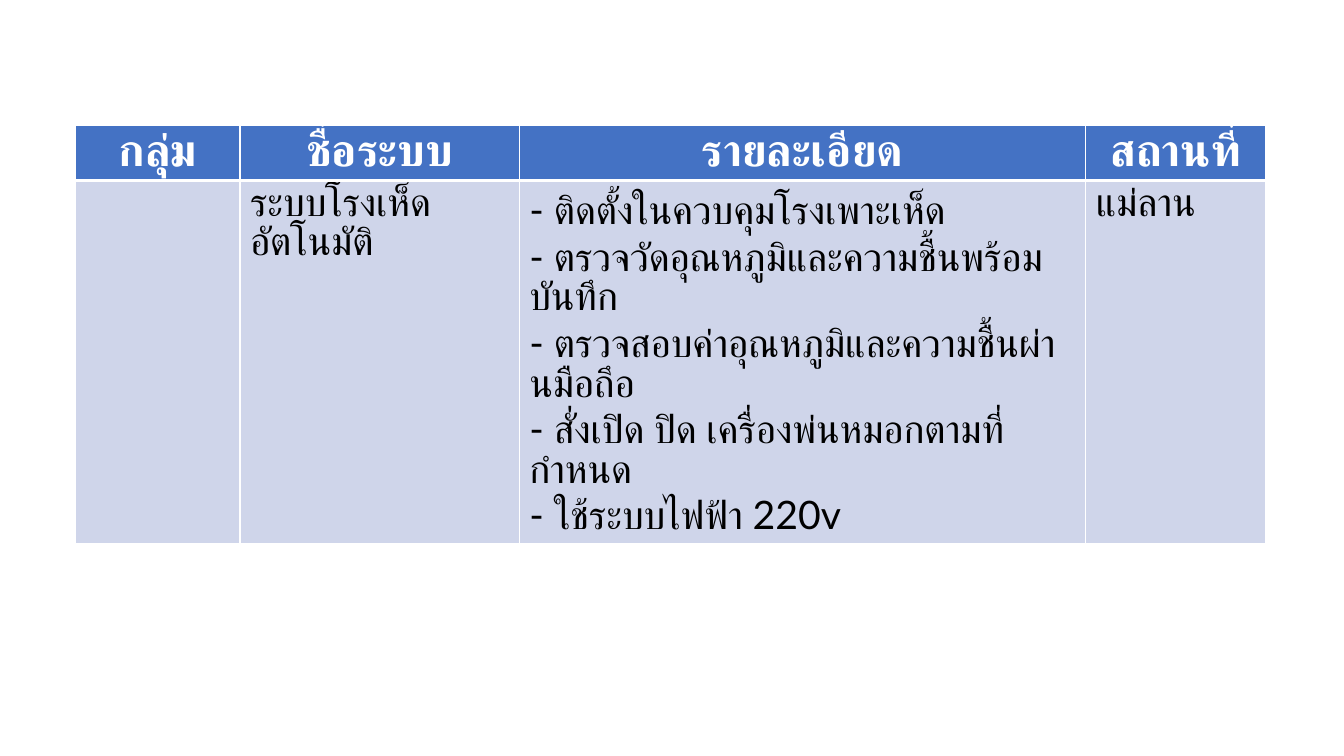
from dataclasses import dataclass

from lxml.etree import SubElement
from pptx import Presentation
from pptx.dml.color import RGBColor
from pptx.enum.text import PP_ALIGN
from pptx.oxml.ns import qn
from pptx.util import Inches, Pt


@dataclass(frozen=True)
class Theme:
    font: str = "Lato"
    white: str = "FFFFFF"
    black: str = "000000"
    header_fill: str = "4472C4"
    body_fill: str = "CFD5EA"
    header_size: int = 32
    body_size: int = 28
    thin_line: int = 1
    thick_line: int = 3


THEME = Theme()
HEADER_STYLE = {
    "fill": THEME.header_fill, "align": PP_ALIGN.CENTER, "bottom": THEME.thick_line,
    "font": {"size": Pt(THEME.header_size), "bold": True}, "color": THEME.white,
}
BODY_STYLE = {
    "fill": THEME.body_fill, "align": PP_ALIGN.LEFT, "bottom": THEME.thin_line,
    "font": {"size": Pt(THEME.body_size), "bold": False}, "color": THEME.black,
}

TABLE_BOX = (0.75, 1.24, 11.8, 4.14)
COLUMN_WIDTHS = (1.63, 2.77, 5.62, 1.78)
HEADER_HEIGHT = 0.55
HEADINGS = (["กลุ่ม"], ["ชื่อระบบ"], ["รายละเอียด"], ["สถานที่"])
SYSTEM = (
    [],
    ["ระบบโรงเห็ดอัตโนมัติ"],
    [
        "- ติดตั้งในควบคุมโรงเพาะเห็ด",
        "- ตรวจวัดอุณหภูมิและความชื้นพร้อมบันทึก",
        "- ตรวจสอบค่าอุณหภูมิและความชื้นผ่านมือถึอ",
        "- สั่งเปิด ปิด เครื่องพ่นหมอกตามที่กำหนด",
        "- ใช้ระบบไฟฟ้า 220v",
    ],
    ["แม่ลาน"],
)


def draw_borders(cell, widths):
    """Insert white border lines ahead of the cell fill, as the schema orders them."""
    properties = cell._tc.get_or_add_tcPr()
    for position, (side, width) in enumerate(widths.items()):
        line = SubElement(properties, qn(f"a:ln{side}"), w=str(Pt(width)))
        fill = SubElement(line, qn("a:solidFill"))
        SubElement(fill, qn("a:srgbClr"), val=THEME.white)
        properties.insert(position, line)


def fill_cell(cell, lines, style, top):
    cell.fill.solid()
    cell.fill.fore_color.rgb = RGBColor.from_string(style["fill"])
    draw_borders(cell, {"L": THEME.thin_line, "R": THEME.thin_line,
                        "T": top, "B": style["bottom"]})
    frame = cell.text_frame
    for index, line in enumerate(lines):
        para = frame.add_paragraph() if index else frame.paragraphs[0]
        para.alignment = style["align"]
        span = para.add_run()
        span.text = line
        span.font.name = THEME.font
        span.font.color.rgb = RGBColor.from_string(style["color"])
        for name, value in style["font"].items():
            setattr(span.font, name, value)


def add_system_table(page, box):
    left, top, width, height = box
    rows = (
        (HEADINGS, HEADER_STYLE, HEADER_HEIGHT, THEME.thin_line),
        (SYSTEM, BODY_STYLE, height - HEADER_HEIGHT, THEME.thick_line),
    )
    table = page.shapes.add_table(
        len(rows), len(COLUMN_WIDTHS), *map(Inches, box)).table
    for column, share in zip(table.columns, COLUMN_WIDTHS):
        column.width = Inches(width * share / sum(COLUMN_WIDTHS))
    for row, (contents, style, row_height, line_above) in zip(table.rows, rows):
        row.height = Inches(row_height)
        for cell, lines in zip(row.cells, contents):
            fill_cell(cell, lines, style, line_above)


def main():
    deck = Presentation()
    deck.slide_width, deck.slide_height = Inches(13.33), Inches(7.5)
    page = deck.slides.add_slide(deck.slide_layouts[6])
    add_system_table(page, TABLE_BOX)
    deck.save("out.pptx")


if __name__ == "__main__":
    main()
